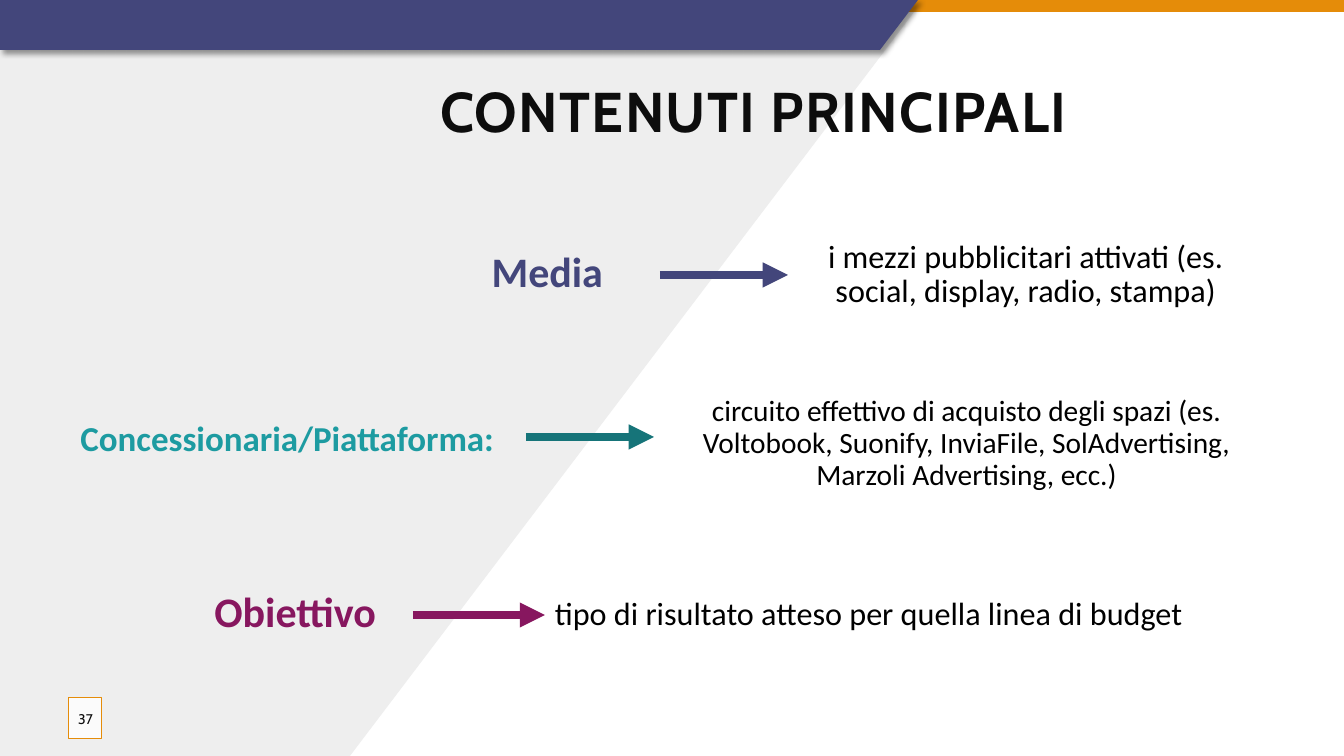
from lxml.etree import SubElement
from pptx import Presentation
from pptx.dml.color import RGBColor
from pptx.enum.shapes import MSO_CONNECTOR as Connector, MSO_SHAPE as Preset
from pptx.enum.text import MSO_ANCHOR as Anchor, MSO_AUTO_SIZE as AutoSize, PP_ALIGN as Align
from pptx.oxml.ns import qn
from pptx.util import Pt

EMU_PER_PX = 914400 / 100.8
WIDTH, HEIGHT = 1344, 756
TITLE_LAYOUT = 5

WHITE = RGBColor(0xFF, 0xFF, 0xFF)
BLACK = RGBColor(0x00, 0x00, 0x00)
INK = RGBColor(0x0D, 0x0D, 0x0D)
GREY = RGBColor(0xEE, 0xEE, 0xEE)
ORANGE = RGBColor(0xE5, 0x8C, 0x09)
INDIGO = RGBColor(0x43, 0x46, 0x7B)
TEAL = RGBColor(0x1D, 0x9B, 0xA1)
DARK_TEAL = RGBColor(0x16, 0x74, 0x79)
PLUM = RGBColor(0x87, 0x17, 0x5F)


def px(length):
    return round(length * EMU_PER_PX)


class SlideBuilder:
    heading_font = "Cabin"
    body_font = "Calibri"

    def __init__(self, presentation):
        self.slide = presentation.slides.add_slide(presentation.slide_layouts[TITLE_LAYOUT])
        self.shapes = self.slide.shapes

    def paint(self, shape, color):
        shape.shadow.inherit = False
        shape.fill.solid()
        shape.fill.fore_color.rgb = color
        shape.line.fill.background()

    def set_text(self, shape, text, size, color, font, align, bold=False):
        frame = shape.text_frame
        frame.word_wrap = True
        frame.auto_size = AutoSize.NONE
        frame.vertical_anchor = Anchor.MIDDLE
        frame.text = text
        paragraph = frame.paragraphs[0]
        paragraph.alignment = align
        paragraph.font.name = font
        paragraph.font.size = Pt(size)
        paragraph.font.bold = bold
        paragraph.font.color.rgb = color
        return paragraph

    def title(self, text, left, top, width, height):
        shape = self.shapes.title
        shape.left, shape.top, shape.width, shape.height = map(px, (left, top, width, height))
        paragraph = self.set_text(shape, text, 40, INK, self.heading_font, Align.LEFT, True)
        paragraph.runs[0].font._element.set("spc", "100")
        self.shapes._spTree.append(shape._element)

    def rectangle(self, left, top, width, height, color):
        shape = self.shapes.add_shape(Preset.RECTANGLE, *map(px, (left, top, width, height)))
        self.paint(shape, color)
        return shape

    def polygon(self, points, color):
        builder = self.shapes.build_freeform(*points[0], scale=EMU_PER_PX)
        builder.add_line_segments(points[1:], close=True)
        shape = builder.convert_to_shape()
        self.paint(shape, color)
        return shape

    def drop_shadow(self, shape):
        effects = shape._element.spPr.find(qn("a:effectLst"))
        shadow = SubElement(effects, qn("a:outerShdw"), blurRad=str(Pt(4)), dist=str(Pt(3)),
                            dir="2700000", algn="tl", rotWithShape="0")
        color = SubElement(shadow, qn("a:srgbClr"), val=str(BLACK))
        SubElement(color, qn("a:alpha"), val="40000")

    def text(self, text, box, size, color, align, bold=False):
        shape = self.shapes.add_textbox(*map(px, box))
        paragraph = self.set_text(shape, text, size, color, self.body_font, align, bold)
        paragraph.line_spacing = 0.9
        paragraph.space_before = Pt(12)
        paragraph.space_after = Pt(2)
        return shape

    def arrow(self, start, end, y, color, target=None):
        connector = self.shapes.add_connector(
            Connector.STRAIGHT, px(start), px(y), px(end), px(y))
        if target is not None:
            connector.end_connect(target, 1)
        connector.line.color.rgb = color
        connector.line.width = Pt(6)
        SubElement(connector.line._get_or_add_ln(), qn("a:tailEnd"), type="triangle")
        SubElement(connector._element.spPr, qn("a:effectLst"))

    def page_number(self, number, left, top, width, height):
        shape = self.rectangle(left, top, width, height, WHITE)
        fill_color = shape._element.spPr.find(qn("a:solidFill"))[0]
        SubElement(fill_color, qn("a:alpha"), val="82000")
        shape.line.color.rgb = ORANGE
        shape.line.width = Pt(0.75)
        shape.text_frame.margin_left = shape.text_frame.margin_right = 0
        self.set_text(shape, number, 10, INK, self.heading_font, Align.CENTER)


def main():
    presentation = Presentation()
    presentation.slide_width, presentation.slide_height = px(WIDTH), px(HEIGHT)
    builder = SlideBuilder(presentation)

    builder.polygon([(0, 0), (918, 0), (918, 7), (350, HEIGHT), (0, HEIGHT)], GREY)
    builder.rectangle(0, 0, WIDTH, 12, ORANGE)
    banner = builder.polygon([(0, 0), (918, 0), (880, 50), (0, 50)], INDIGO)
    builder.drop_shadow(banner)
    builder.title("CONTENUTI PRINCIPALI", 430, 71, 904, 78)

    entries = [
        ("Media", (69, 251, 544, 46), 30, INDIGO,
         "i mezzi pubblicitari attivati (es. social, display, radio, stampa)",
         (788, 225, 476, 100), 23, Align.CENTER, (660, 788, 275), INDIGO, True),
        ("Concessionaria/Piattaforma:", (60, 424, 444, 33), 25, TEAL,
         "circuito effettivo di acquisto degli spazi (es. Voltobook, Suonify, "
         "InviaFile, SolAdvertising, Marzoli Advertising, ecc.)",
         (669, 394, 595, 100), 21, Align.CENTER, (526, 654, 437), DARK_TEAL, False),
        ("Obiettivo", (60, 591, 326, 46), 30, PLUM,
         "tipo di risultato atteso per quella linea di budget",
         (545, 565, 718, 100), 23, Align.LEFT, (413, 545, 615), PLUM, True),
    ]
    for (label, label_box, label_size, label_color, description, description_box,
         description_size, align, arrow_span, arrow_color, joined) in entries:
        builder.text(label, label_box, label_size, label_color, Align.RIGHT, True)
        target = builder.text(description, description_box, description_size, BLACK, align)
        builder.arrow(*arrow_span, arrow_color, target if joined else None)

    builder.page_number("37", 69, 698, 33, 41)
    presentation.save("out.pptx")


if __name__ == "__main__":
    main()
